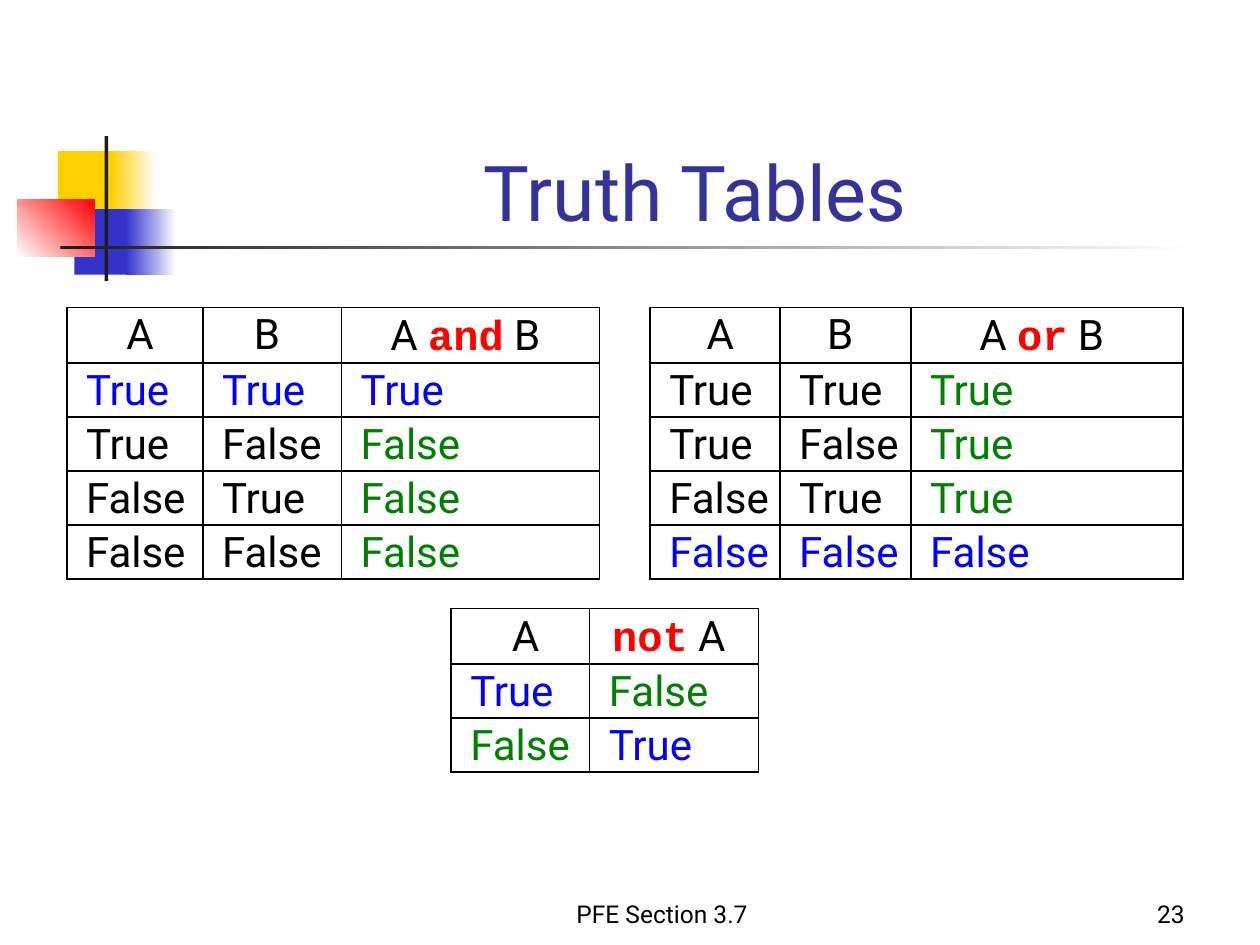
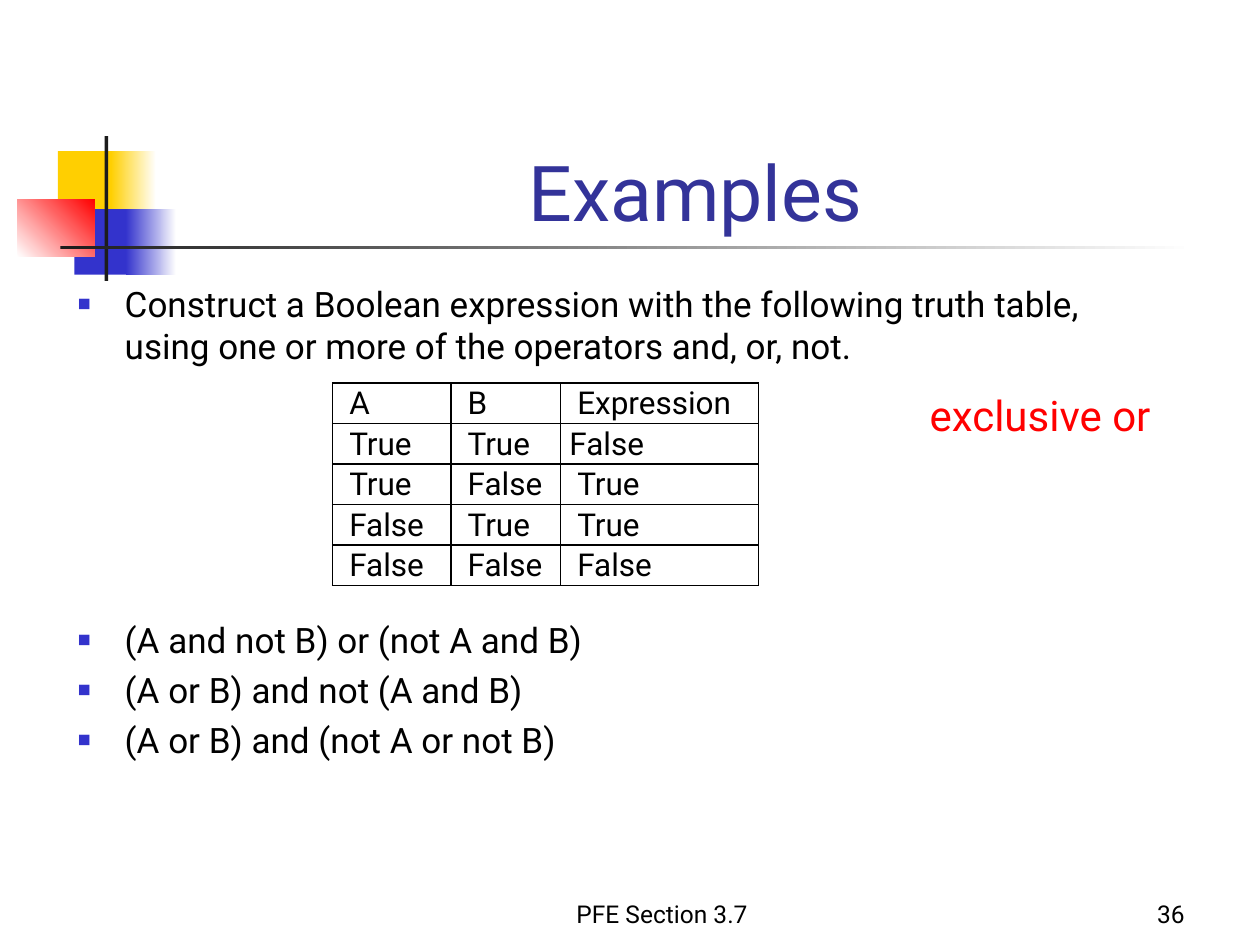
"""Build two slides on Boolean truth tables and save them as a presentation."""
from lxml.etree import SubElement
from pptx import Presentation
from pptx.dml.color import RGBColor
from pptx.enum.shapes import MSO_SHAPE as Shape
from pptx.enum.text import MSO_ANCHOR as Anchor, MSO_AUTO_SIZE as AutoSize, PP_ALIGN as Align
from pptx.oxml import parse_xml
from pptx.oxml.ns import nsdecls, qn
from pptx.util import Inches, Pt

COLORS = {
    "black": "000000", "white": "FFFFFF", "ink": "1C1C1C", "title": "333399",
    "yellow": "FFCF01", "indigo": "3333CC", "red": "FF0000",
    "blue": "0000FF", "green": "008000",
}
CELL_COLORS = {"k": "black", "b": "blue", "g": "green"}
FONT, CODE_FONT = "Roboto", "Courier New"
CELL_INSET = 0.07


def write(paragraph, text, size=24, color="black", align=Align.LEFT, before=0, spacing=1):
    """Write text into a paragraph; words between asterisks become red code."""
    paragraph.alignment = align
    paragraph.line_spacing = spacing
    paragraph.space_before = Pt(before)
    for i, part in enumerate(text.split("*")):
        if not part:
            continue
        is_code = i % 2 == 1
        run = paragraph.add_run()
        run.text = part
        run.font.name = CODE_FONT if is_code else FONT
        run.font.size = Pt(size)
        run.font.bold = is_code
        run.font.color.rgb = RGBColor.from_string(COLORS["red" if is_code else color])


def add_truth_table(slide, left, top, widths, heights, header, rows, colors,
                    size=24, header_align=Align.CENTER, flush=()):
    """Add a ruled truth table whose colour codes name one colour per cell."""
    grid = [header] + [row.split() for row in rows]
    header_height, row_height = heights
    total_height = header_height + row_height * len(rows)
    table = slide.shapes.add_table(
        len(grid), len(widths), Inches(left), Inches(top),
        Inches(sum(widths)), Inches(total_height)).table
    table.first_row = table.horz_banding = False
    for column, width in zip(table.columns, widths):
        column.width = Inches(width)
    indent = CELL_INSET + size * 0.25 / 72
    for r, values in enumerate(grid):
        table.rows[r].height = Inches(row_height if r else header_height)
        for c, value in enumerate(values):
            cell = table.cell(r, c)
            centred = r == 0 and header_align == Align.CENTER
            pushed_left = centred and c > 0
            cell.margin_left = Inches(
                CELL_INSET if pushed_left or (r, c) in flush else indent)
            cell.margin_right = Inches(indent if pushed_left else CELL_INSET)
            cell.margin_top = cell.margin_bottom = 0
            write(cell.text_frame.paragraphs[0], value, size=size, spacing=1.07,
                  color=CELL_COLORS[colors[r - 1][c]] if r else "black",
                  align=header_align if r == 0 else Align.LEFT)
            cell.fill.background()
            properties = cell._tc.get_or_add_tcPr()
            for i, side in enumerate("LRTB"):
                properties.insert(i, parse_xml(
                    f'<a:ln{side} {nsdecls("a")} w="12700"><a:solidFill>'
                    f'<a:srgbClr val="{COLORS["black"]}"/></a:solidFill></a:ln{side}>'))


presentation = Presentation()
presentation.slide_width, presentation.slide_height = Inches(10), Inches(7.5)
truth_slide = presentation.slides.add_slide(presentation.slide_layouts[5])
examples_slide = presentation.slides.add_slide(presentation.slide_layouts[1])

EMBLEM = [
    ((0.46, 1.2, 0.48, 0.52), ["yellow"], 0),
    ((0.88, 1.2, 0.36, 0.52), ["yellow", "white"], 0),
    ((0.59, 1.66, 0.46, 0.52), ["indigo"], 0),
    ((1, 1.66, 0.4, 0.52), ["indigo", "white"], 0),
    ((0.14, 1.58, 0.61, 0.46), ["white", "red"], 45),
    ((0.83, 1.08, 0.03, 1.15), ["ink"], 0),
    ((0.48, 1.95, 9, 0.03), ["ink", "white"], 0),
]

for slide, heading, number in [(truth_slide, "Truth Tables", "23"),
                               (examples_slide, "Examples", "36")]:
    for place, shades, angle in EMBLEM:
        block = slide.shapes.add_shape(Shape.RECTANGLE, *map(Inches, place))
        block.shadow.inherit = False
        block.line.fill.background()
        if len(shades) == 1:
            block.fill.solid()
            block.fill.fore_color.rgb = RGBColor.from_string(COLORS[shades[0]])
        else:
            block.fill.gradient()
            block.fill.gradient_angle = angle
            for position, (stop, shade) in enumerate(zip(block.fill.gradient_stops, shades)):
                stop.position = position
                stop.color.rgb = RGBColor.from_string(COLORS[shade])

    title = slide.shapes.title
    title.left, title.top, title.width, title.height = map(Inches, (1.26, 0.68, 8.52, 1.25))
    title.text_frame.auto_size = AutoSize.NONE
    title.text_frame.vertical_anchor = Anchor.BOTTOM
    write(title.text_frame.paragraphs[0], heading, size=44, color="title", align=Align.CENTER)

    for text, left, width, align in [("PFE Section 3.7", 3.67, 3.17, Align.CENTER),
                                     (number, 7.42, 2.08, Align.RIGHT)]:
        footer = slide.shapes.add_textbox(
            Inches(left), Inches(6.92), Inches(width), Inches(0.5)).text_frame
        footer.word_wrap = True
        footer.vertical_anchor = Anchor.BOTTOM
        write(footer.paragraphs[0], text, size=14, align=align)

PAIRS = ["True True", "True False", "False True", "False False"]
for operator, left, widths, results, colors in [
    ("and", 0.53, (1.08, 1.1, 2.05), "True False False False", ["bbb", "kkg", "kkg", "kkg"]),
    ("or", 5.16, (1.03, 1.04, 2.16), "True True True False", ["kkg", "kkg", "kkg", "bbb"]),
]:
    rows = [f"{pair} {result}" for pair, result in zip(PAIRS, results.split())]
    add_truth_table(truth_slide, left, 2.44, widths, (0.44, 0.42),
                    ["A", "B", f"A *{operator}* B"], rows, colors)
add_truth_table(truth_slide, 3.58, 4.83, (1.1, 1.34), (0.44, 0.42),
                ["A", "*not* A"], ["True False", "False True"], ["bg", "gb"])

body = examples_slide.placeholders[1]
body.left, body.top, body.width, body.height = map(Inches, (0.51, 1.78, 8.86, 2.36))
body.text_frame.auto_size = AutoSize.NONE
body.text_frame.margin_top = Inches(0.46)
TASK = ("Construct a Boolean expression with the following truth table, "
        "using one or more of the operators and, or, not.")
for i, (text, before) in enumerate([
    (TASK, 0),
    ("(A and not B) or (not A and B)", 144),
    ("(A or B) and not (A and B)", 4.5),
    ("(A or B) and (not A or not B)", 4.5),
]):
    item = body.text_frame.paragraphs[0] if i == 0 else body.text_frame.add_paragraph()
    write(item, text, size=20, before=before)
    properties = item._p.get_or_add_pPr()
    properties.set("marL", str(Inches(0.38)))
    properties.set("indent", str(-Inches(0.38)))
    bullet_color = SubElement(properties, qn("a:buClr"))
    SubElement(bullet_color, qn("a:srgbClr")).set("val", COLORS["indigo"])
    SubElement(properties, qn("a:buSzPct")).set("val", "120000")
    SubElement(properties, qn("a:buChar")).set("char", "▪")

exclusive_rows = [f"{pair} {result}" for pair, result in
                  zip(PAIRS, ["False", "True", "True", "False"])]
add_truth_table(examples_slide, 2.64, 3.04, (0.94, 0.87, 1.57), (0.32, 0.31),
                ["A", "B", "Expression"], exclusive_rows, ["kkk"] * 4,
                size=18, header_align=Align.LEFT, flush={(1, 2)})

answer = examples_slide.shapes.add_textbox(
    Inches(7.28), Inches(3.04), Inches(2), Inches(0.5)).text_frame
answer.word_wrap = False
answer.auto_size = AutoSize.SHAPE_TO_FIT_TEXT
write(answer.paragraphs[0], "exclusive or", color="red")

presentation.save("out.pptx")
